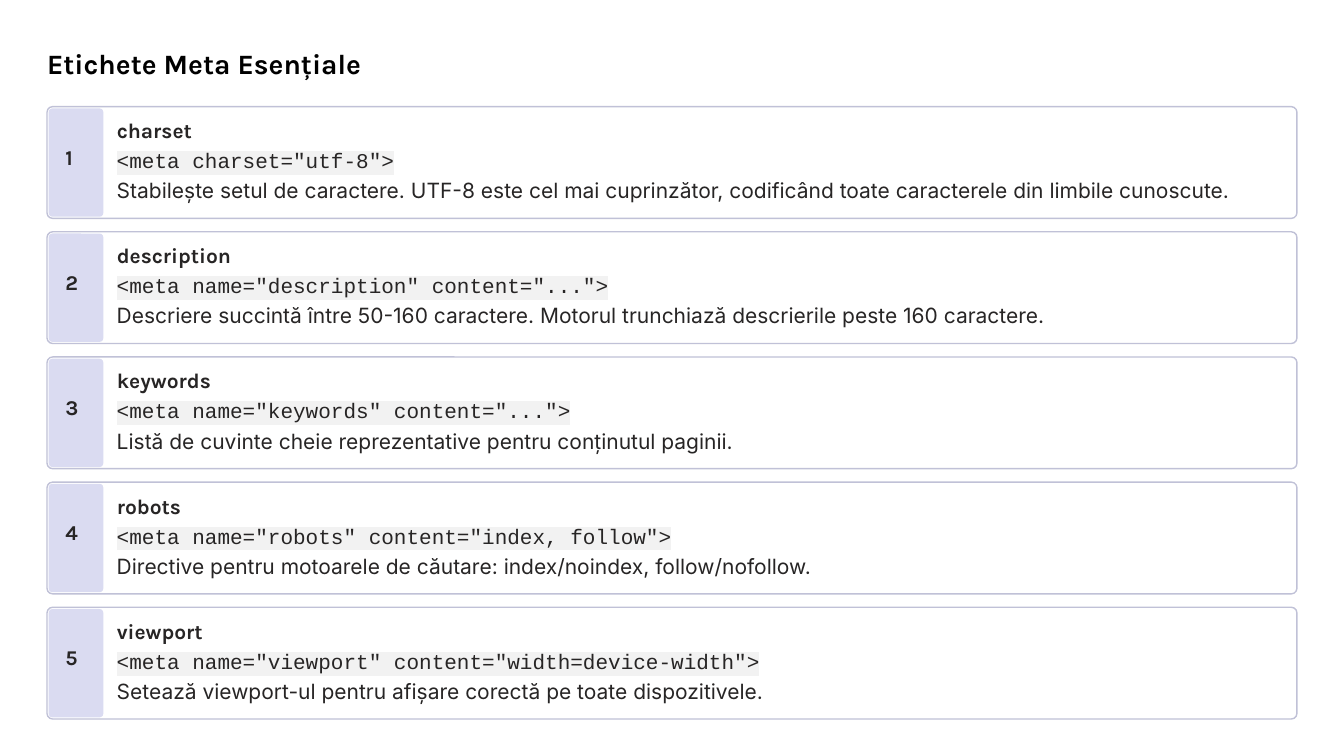
from dataclasses import dataclass

from lxml.etree import SubElement
from pptx import Presentation
from pptx.dml.color import RGBColor
from pptx.enum.shapes import MSO_SHAPE
from pptx.enum.text import MSO_ANCHOR, PP_ALIGN
from pptx.oxml.ns import qn
from pptx.shapes.autoshape import Shape
from pptx.slide import Slide
from pptx.util import Inches, Length, Pt

BLACK = RGBColor(0x00, 0x00, 0x00)
INK = RGBColor(0x27, 0x25, 0x25)
WHITE = RGBColor(0xFF, 0xFF, 0xFF)
BORDER = RGBColor(0xC0, 0xC1, 0xD7)
LAVENDER = RGBColor(0xDA, 0xDB, 0xF1)
CODE_GREY = RGBColor(0xF2, 0xF2, 0xF2)

# Grid of 16 columns by 9 rows
SLIDE_WIDTH, SLIDE_HEIGHT = Inches(16), Inches(9)
COLUMN, ROW = SLIDE_WIDTH / 16, SLIDE_HEIGHT / 9

MARGIN = 0.56
FIRST_CARD_TOP = 1.27
CARD_PITCH = 1.49
CARD_HEIGHT = 1.33
BORDER_INSET = 0.02
TEXT_LEFT = 1.39


@dataclass(frozen=True)
class Area:
    left: float
    top: float
    width: float
    height: float

    def lengths(self) -> tuple[Length, Length, Length, Length]:
        return (Length(round(self.left * COLUMN)), Length(round(self.top * ROW)),
                Length(round(self.width * COLUMN)), Length(round(self.height * ROW)))


@dataclass(frozen=True)
class TextStyle:
    font: str
    spacing: float
    size: float = 18
    bold: bool = False
    color: RGBColor = INK
    highlight: RGBColor | None = None


@dataclass(frozen=True)
class MetaTag:
    name: str
    code: str
    purpose: str


TITLE = TextStyle("Karla", 36, size=24, bold=True, color=BLACK)
NUMBER = TextStyle("Karla", 17, bold=True)
NAME = TextStyle("Karla", 18, bold=True)
CODE = TextStyle("Courier New", 18.5, highlight=CODE_GREY)
PURPOSE = TextStyle("Inter", 18.5)

META_TAGS = [
    MetaTag("charset", '<meta charset="utf-8">',
            "Stabilește setul de caractere. UTF-8 este cel mai cuprinzător, "
            "codificând toate caracterele din limbile cunoscute."),
    MetaTag("description", '<meta name="description" content="...">',
            "Descriere succintă între 50-160 caractere. "
            "Motorul trunchiază descrierile peste 160 caractere."),
    MetaTag("keywords", '<meta name="keywords" content="...">',
            "Listă de cuvinte cheie reprezentative pentru conținutul paginii."),
    MetaTag("robots", '<meta name="robots" content="index, follow">',
            "Directive pentru motoarele de căutare: index/noindex, follow/nofollow."),
    MetaTag("viewport", '<meta name="viewport" content="width=device-width">',
            "Setează viewport-ul pentru afișare corectă pe toate dispozitivele."),
]


def write(holder: Shape, text: str, style: TextStyle) -> None:
    frame = holder.text_frame
    frame.margin_left = frame.margin_right = frame.margin_top = frame.margin_bottom = 0
    frame.word_wrap = False
    frame.vertical_anchor = MSO_ANCHOR.TOP
    frame.text = text
    paragraph = frame.paragraphs[0]
    paragraph.alignment = PP_ALIGN.LEFT
    paragraph.line_spacing = Pt(style.spacing)
    run = paragraph.runs[0]
    run.font.name = style.font
    run.font.size = Pt(style.size)
    run.font.bold = style.bold
    run.font.color.rgb = style.color
    if style.highlight is not None:
        properties = run.font._element
        highlight = SubElement(properties, qn("a:highlight"))
        SubElement(highlight, qn("a:srgbClr"), val=str(style.highlight))
        properties.find(qn("a:solidFill")).addnext(highlight)


def add_text(slide: Slide, area: Area, text: str, style: TextStyle) -> None:
    write(slide.shapes.add_textbox(*area.lengths()), text, style)


def add_panel(slide: Slide, area: Area, rounding: float, fill: RGBColor,
              border: RGBColor | None = None) -> None:
    panel = slide.shapes.add_shape(MSO_SHAPE.ROUNDED_RECTANGLE, *area.lengths())
    panel.adjustments[0] = rounding
    panel.shadow.inherit = False
    panel.fill.solid()
    panel.fill.fore_color.rgb = fill
    if border is None:
        panel.line.fill.background()
    else:
        panel.line.color.rgb = border
        panel.line.width = Pt(1.2)


def add_title(slide: Slide, text: str) -> None:
    title = slide.shapes.title
    title.left, title.top, title.width, title.height = Area(MARGIN, 0.45, 4.61, 0.5).lengths()
    write(title, text, TITLE)


def add_card(slide: Slide, index: int, tag: MetaTag) -> None:
    top = FIRST_CARD_TOP + index * CARD_PITCH
    # Frame and number band
    add_panel(slide, Area(MARGIN, top, 16 - 2 * MARGIN, CARD_HEIGHT), 0.05, WHITE, BORDER)
    add_panel(slide, Area(MARGIN + BORDER_INSET, top + BORDER_INSET, 0.65,
                          CARD_HEIGHT - 2 * BORDER_INSET), 0.07, LAVENDER)
    add_text(slide, Area(0.78, top + 0.51, 0.24, 0.3), str(index + 1), NUMBER)
    # Name, code and purpose
    add_text(slide, Area(TEXT_LEFT, top + 0.18, 2.02, 0.25), tag.name, NAME)
    add_text(slide, Area(TEXT_LEFT, top + 0.53, 13.87, 0.27), tag.code, CODE)
    add_text(slide, Area(TEXT_LEFT, top + 0.89, 13.87, 0.26), tag.purpose, PURPOSE)


def main() -> None:
    deck = Presentation()
    deck.slide_width, deck.slide_height = SLIDE_WIDTH, SLIDE_HEIGHT
    slide = deck.slides.add_slide(deck.slide_layouts[5])
    add_title(slide, "Etichete Meta Esențiale")
    for index, tag in enumerate(META_TAGS):
        add_card(slide, index, tag)
    deck.save("out.pptx")


if __name__ == "__main__":
    main()
